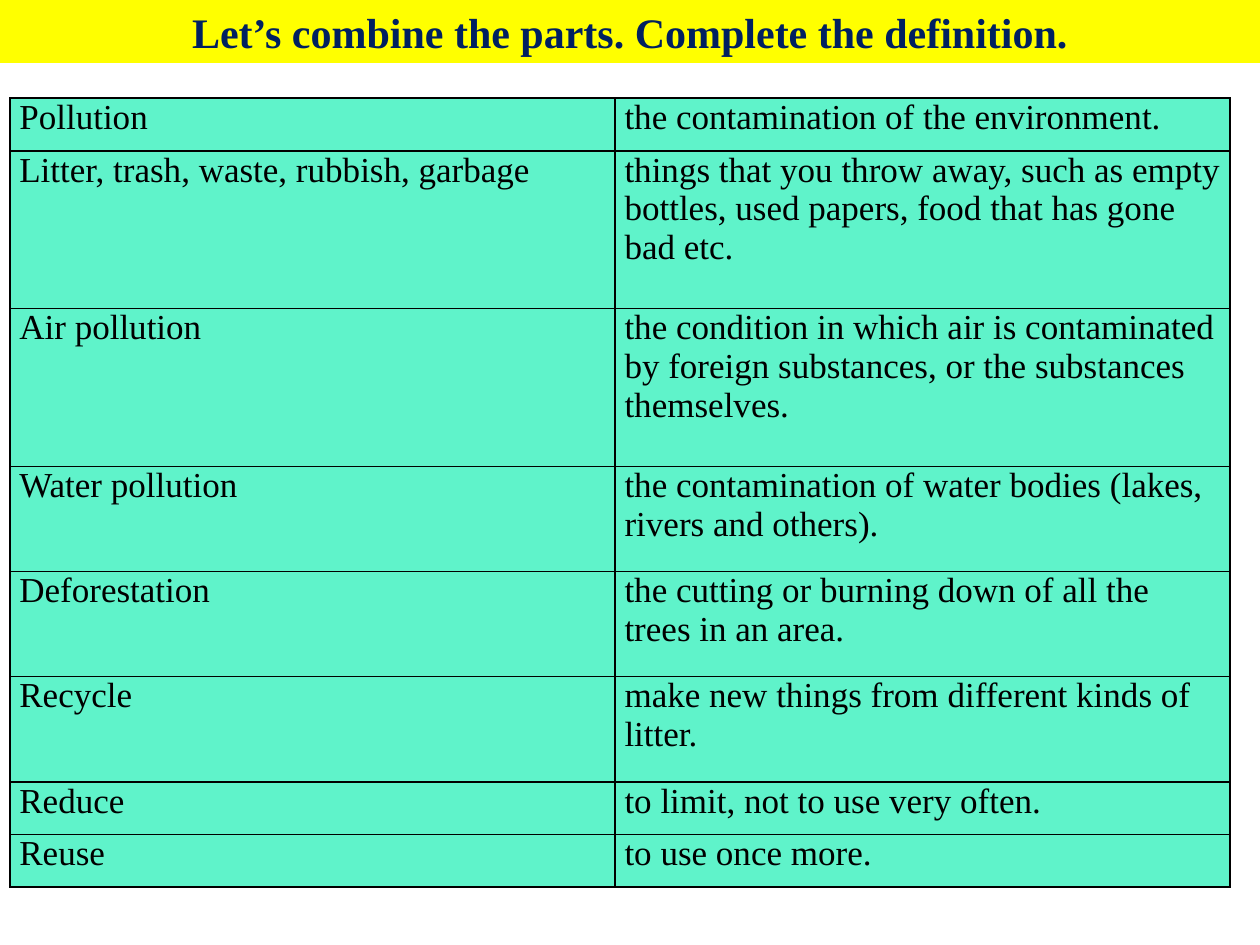
import pptx
import pptx.dml.color
import pptx.enum.shapes
import pptx.enum.text
import pptx.util
import lxml.etree

Cm = pptx.util.Cm
Pt = pptx.util.Pt
RGBColor = pptx.dml.color.RGBColor

YELLOW = RGBColor(0xFF, 0xFF, 0x00)
NAVY = RGBColor(0x00, 0x20, 0x60)
MINT = RGBColor(0x5F, 0xF3, 0xCA)
BLACK = RGBColor(0x00, 0x00, 0x00)

LINE_HEIGHT = 1.06
COLUMN_WIDTHS = (12.2, 12.4)
DEFINITIONS = [
    ("Pollution", "the contamination of the environment.", 1),
    ("Litter, trash, waste, rubbish, garbage",
     "things that you throw away, such as empty bottles, used papers, food that has gone bad etc.", 3),
    ("Air pollution",
     "the condition in which air is contaminated by foreign substances, or the substances themselves.", 3),
    ("Water pollution", "the contamination of water bodies (lakes, rivers and others).", 2),
    ("Deforestation", "the cutting or burning down of all the trees in an area.", 2),
    ("Recycle", "make new things from different kinds of litter.", 2),
    ("Reduce", "to limit, not to use very often.", 1),
    ("Reuse", "to use once more.", 1),
]


class SlideBuilder:
    font_name = "Times New Roman"
    border_width = Pt(1)
    cell_margin = Cm(0.19)

    def __init__(self, slide):
        self.slide = slide

    def format_text(self, text_frame, size, color, bold=False):
        for paragraph in text_frame.paragraphs:
            for run in paragraph.runs:
                run.font.name = self.font_name
                run.font.size = Pt(size)
                run.font.bold = bold
                run.font.color.rgb = color

    def add_banner(self, text, left, top, width, height):
        shape = self.slide.shapes.add_shape(
            pptx.enum.shapes.MSO_SHAPE.RECTANGLE, Cm(left), Cm(top), Cm(width), Cm(height))
        shape.shadow.inherit = False
        shape.fill.solid()
        shape.fill.fore_color.rgb = YELLOW
        shape.line.fill.background()
        text_frame = shape.text_frame
        text_frame.text = text
        text_frame.word_wrap = True
        text_frame.vertical_anchor = pptx.enum.text.MSO_ANCHOR.MIDDLE
        text_frame.paragraphs[0].alignment = pptx.enum.text.PP_ALIGN.CENTER
        self.format_text(text_frame, 24, NAVY, bold=True)

    def add_borders(self, cell):
        properties = cell._tc.get_or_add_tcPr()
        for side in ("lnL", "lnR", "lnT", "lnB"):
            line = lxml.etree.SubElement(
                properties, pptx.oxml.ns.qn("a:" + side), w=str(self.border_width))
            fill = lxml.etree.SubElement(line, pptx.oxml.ns.qn("a:solidFill"))
            lxml.etree.SubElement(fill, pptx.oxml.ns.qn("a:srgbClr"), val=str(BLACK))

    def fill_cell(self, cell, text):
        cell.margin_left = cell.margin_right = self.cell_margin
        cell.margin_top = cell.margin_bottom = 0
        self.add_borders(cell)
        cell.fill.solid()
        cell.fill.fore_color.rgb = MINT
        cell.text_frame.text = text
        self.format_text(cell.text_frame, 20, BLACK)

    def add_definitions(self, definitions, left, top):
        total_height = LINE_HEIGHT * sum(lines for _, _, lines in definitions)
        table = self.slide.shapes.add_table(
            len(definitions), len(COLUMN_WIDTHS), Cm(left), Cm(top),
            Cm(sum(COLUMN_WIDTHS)), Cm(total_height)).table
        for column, width in zip(table.columns, COLUMN_WIDTHS):
            column.width = Cm(width)
        for row, (term, meaning, lines) in zip(table.rows, definitions):
            row.height = Cm(LINE_HEIGHT * lines)
            for cell, text in zip(row.cells, (term, meaning)):
                self.fill_cell(cell, text)


def main():
    presentation = pptx.Presentation()
    presentation.slide_width = Cm(25.4)
    presentation.slide_height = Cm(19.05)
    slide = presentation.slides.add_slide(presentation.slide_layouts[6])
    builder = SlideBuilder(slide)
    builder.add_banner("Let’s combine the parts. Complete the definition.", 0, 0, 25.4, 1.27)
    builder.add_definitions(DEFINITIONS, 0.2, 1.98)
    presentation.save("out.pptx")


if __name__ == "__main__":
    main()
